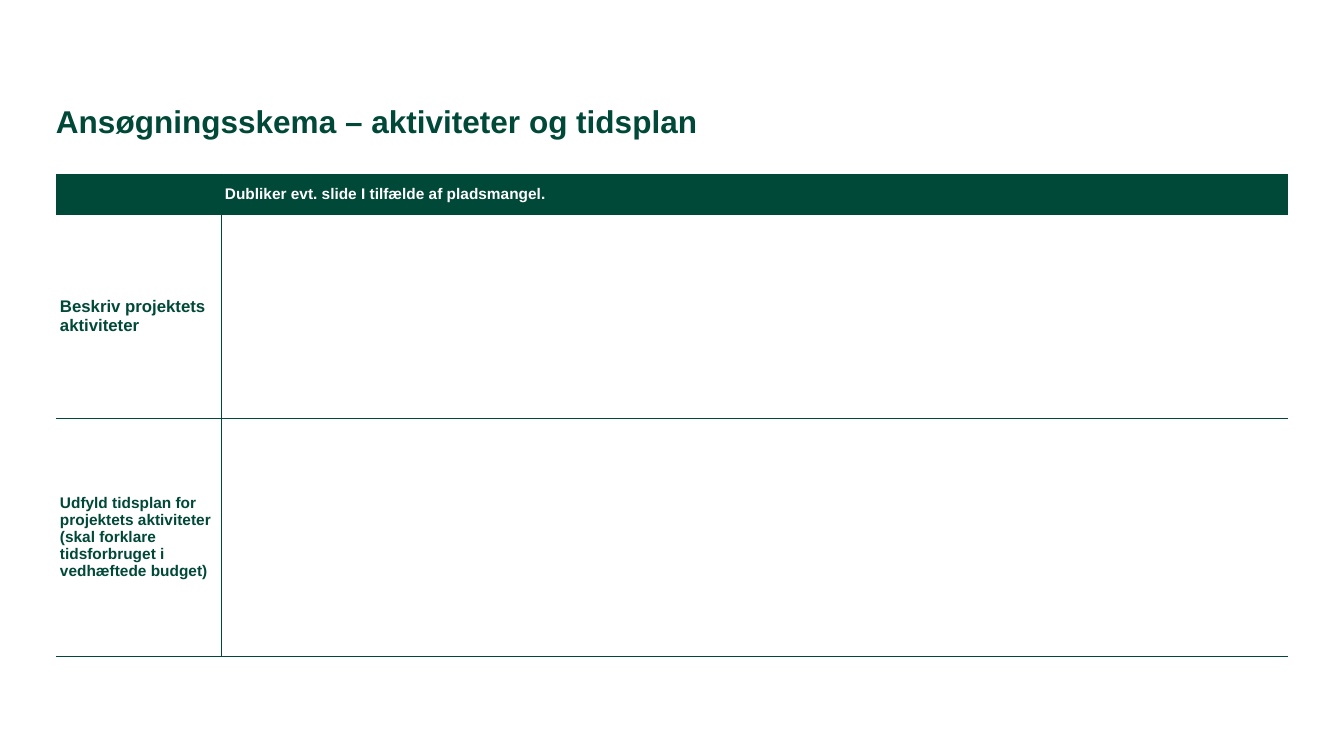
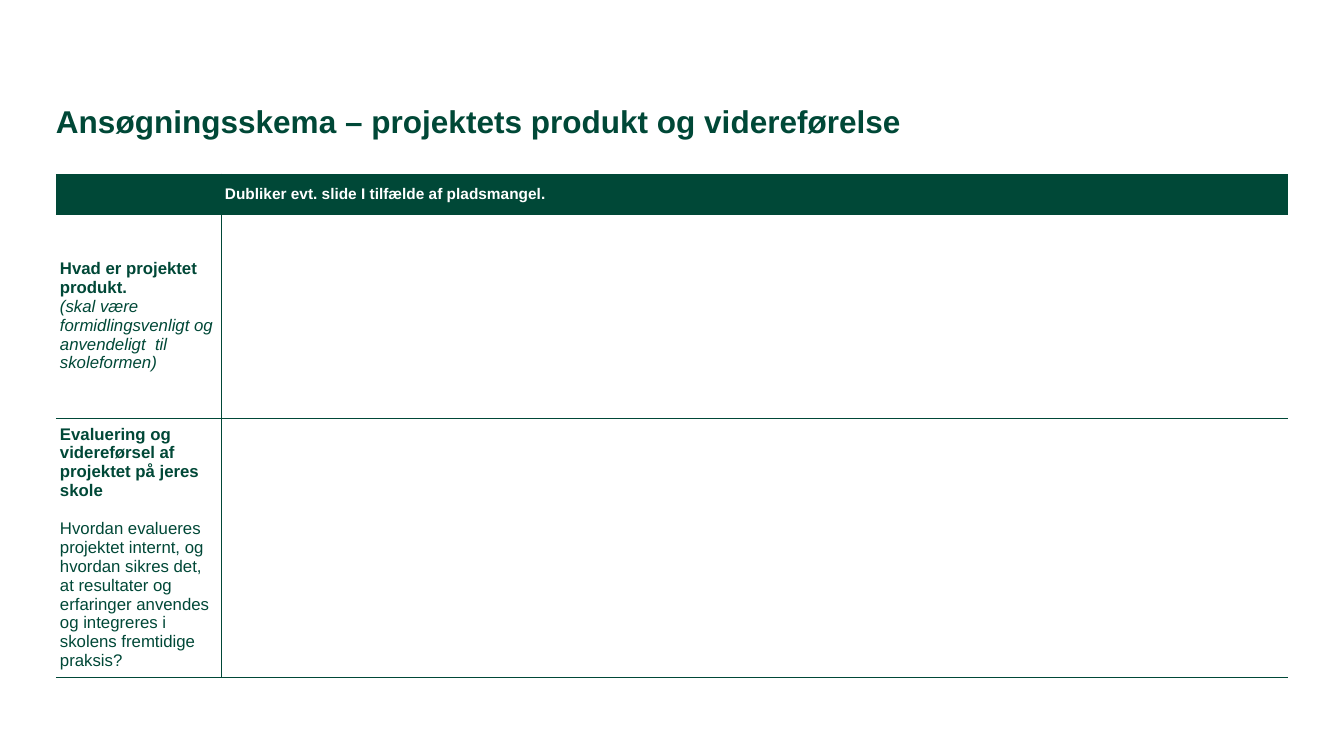
import pptx
import pptx.dml.color
import pptx.enum.text
import pptx.oxml
import pptx.oxml.ns
import pptx.util
from dataclasses import dataclass


@dataclass(frozen=True)
class Theme:
    font: str = "Arial"
    green: str = "004837"
    white: str = "FFFFFF"
    title: float = 22.5
    body: float = 12
    small: float = 11
    gap: float = 14
    rule: float = 0.5


THEME = Theme()
LEFT, WIDTH = 56, 1232
COLUMNS = (165, 1067)
HEADER_HEIGHT = 40
HEADER = "Dubliker evt. slide I tilfælde af pladsmangel."


def px(n):
    return pptx.util.Emu(round(n * 914400 / 100.8))


def rgb(value):
    return pptx.dml.color.RGBColor.from_string(value)


class Deck:
    def __init__(self, theme):
        self.theme = theme
        self.prs = pptx.Presentation()
        self.prs.slide_width, self.prs.slide_height = px(1344), px(756)
        self.s = None

    def slide(self, title):
        self.s = self.prs.slides.add_slide(self.prs.slide_layouts[5])
        sp = self.s.shapes.title
        sp.left, sp.top, sp.width, sp.height = px(LEFT), px(106), px(WIDTH), px(68)
        tf = sp.text_frame
        tf.margin_left = tf.margin_right = tf.margin_top = tf.margin_bottom = 0
        tf.vertical_anchor = pptx.enum.text.MSO_ANCHOR.TOP
        tf.auto_size = pptx.enum.text.MSO_AUTO_SIZE.NONE
        tf.word_wrap = True
        p = tf.paragraphs[0]
        p.line_spacing = 0.9
        self.paragraph(p, title, self.theme.title, self.theme.green)

    def paragraph(self, p, text, size, color, bold=True, italic=False):
        p.text = text
        p.alignment = pptx.enum.text.PP_ALIGN.LEFT
        font = p.font
        font.name, font.size = self.theme.font, pptx.util.Pt(size)
        font.bold, font.italic = bold, italic
        font.color.rgb = rgb(color)

    def borders(self, cell, sides):
        """Draw the named sides (L, R, T, B) and clear the others."""
        tcPr = cell._tc.get_or_add_tcPr()
        ns = pptx.oxml.ns.nsdecls("a")
        width = pptx.util.Pt(self.theme.rule)
        for side in "LRTB":
            paint = "<a:noFill/>"
            if side in sides:
                paint = f'<a:solidFill><a:srgbClr val="{self.theme.green}"/></a:solidFill>'
            tcPr.append(pptx.oxml.parse_xml(
                f'<a:ln{side} {ns} w="{width}">{paint}</a:ln{side}>'))

    def cell(self, cell, sides, fill=None):
        cell.margin_left = cell.margin_right = px(4)
        cell.margin_top = cell.margin_bottom = px(4)
        cell.vertical_anchor = pptx.enum.text.MSO_ANCHOR.MIDDLE
        self.borders(cell, sides)
        if fill:
            cell.fill.solid()
            cell.fill.fore_color.rgb = rgb(fill)
        else:
            cell.fill.background()

    def form(self, questions):
        """Header row, then one row per (height, size, gap, paragraphs)."""
        t = self.theme
        heights = [HEADER_HEIGHT] + [question[0] for question in questions]
        table = self.s.shapes.add_table(
            len(heights), len(COLUMNS), px(LEFT), px(174), px(WIDTH), px(sum(heights))).table
        table.first_row = table.horz_banding = False
        for column, width in zip(table.columns, COLUMNS):
            column.width = px(width)
        for i, height in enumerate(heights):
            table.rows[i].height = px(height)
            fill = t.green if i == 0 else None
            self.cell(table.cell(i, 0), "RTB", fill)
            self.cell(table.cell(i, 1), "LTB", fill)

        # Header text
        p = table.cell(0, 1).text_frame.paragraphs[0]
        self.paragraph(p, HEADER, t.small, t.white)

        # Questions
        for i, (_, size, gap, paragraphs) in enumerate(questions, 1):
            tf = table.cell(i, 0).text_frame
            for j, (text, bold, italic) in enumerate(paragraphs):
                p = tf.add_paragraph() if j else tf.paragraphs[0]
                if j and gap:
                    p.space_before = pptx.util.Pt(gap)
                self.paragraph(p, text, size, t.green, bold, italic)


def main():
    deck = Deck(THEME)

    # Activities and schedule
    deck.slide("Ansøgningsskema – aktiviteter og tidsplan")
    deck.form([
        (204, THEME.body, 0, [("Beskriv projektets aktiviteter", True, False)]),
        (238, THEME.small, 0, [
            ("Udfyld tidsplan for projektets aktiviteter (skal forklare "
             "tidsforbruget i vedhæftede budget)", True, False)]),
    ])

    # Product and continuation
    deck.slide("Ansøgningsskema – projektets produkt og videreførelse")
    deck.form([
        (204, THEME.body, 0, [
            ("Hvad er projektet produkt.", True, False),
            ("(skal være formidlingsvenligt og anvendeligt  til skoleformen)", False, True)]),
        (259, THEME.body, THEME.gap, [
            ("Evaluering og videreførsel af projektet på jeres skole", True, False),
            ("Hvordan evalueres projektet internt, og hvordan sikres det, at resultater og "
             "erfaringer anvendes og integreres i skolens fremtidige praksis?", False, False)]),
    ])

    deck.prs.save("out.pptx")


if __name__ == "__main__":
    main()
